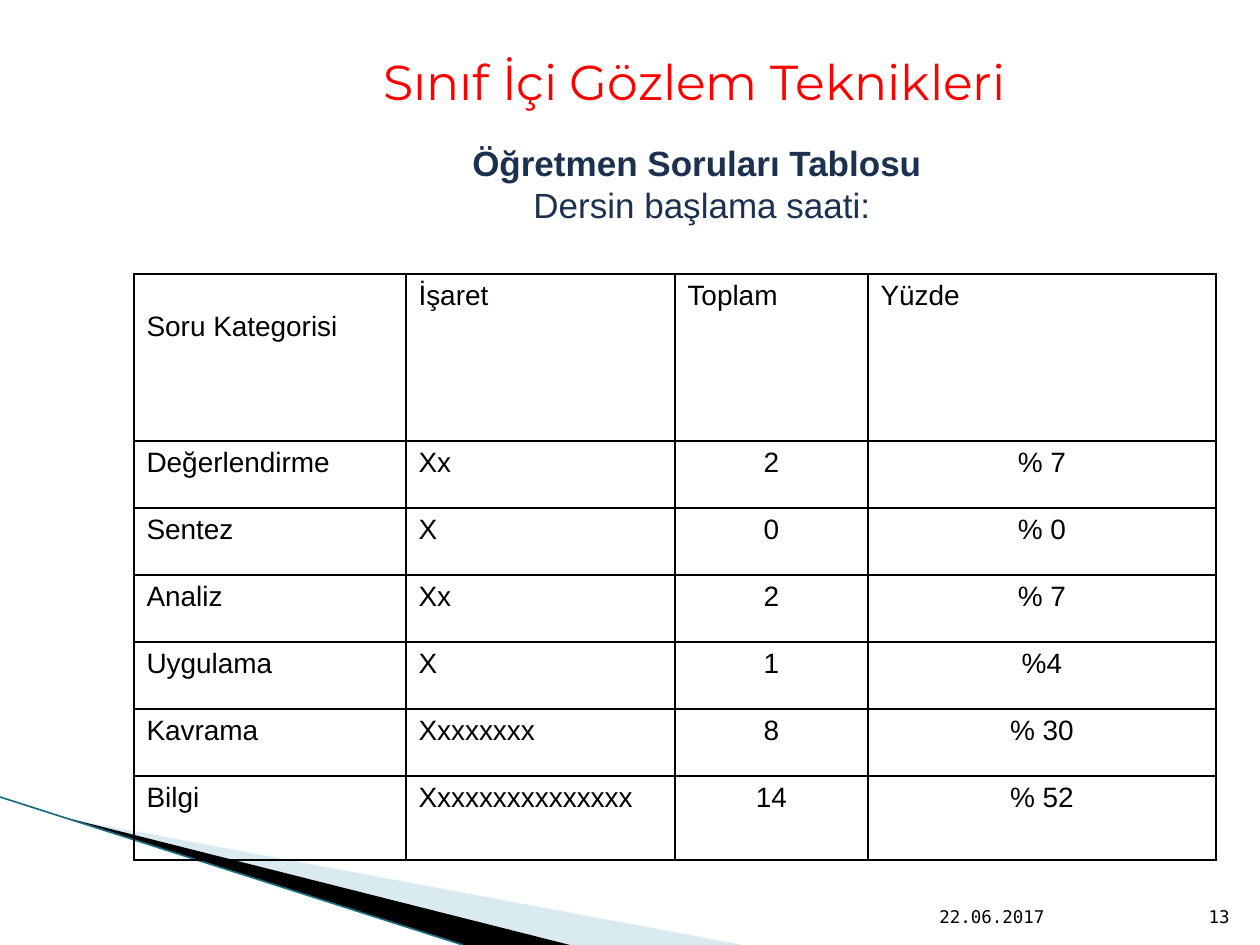
from lxml.etree import SubElement
from pptx import Presentation
from pptx.dml.color import RGBColor
from pptx.enum.shapes import MSO_CONNECTOR
from pptx.enum.text import MSO_ANCHOR, PP_ALIGN
from pptx.oxml.ns import qn
from pptx.util import Pt

PX = 914400 / 126
COLORS = {
    "black": "000000",
    "title": "FF0000",
    "subtitle": "1C314E",
    "pale": "A0CBDC",
    "teal": "1B6F82",
}


def px(length):
    return round(length * PX)


def add_text(page, area, lines, font, size, color, align, anchor=MSO_ANCHOR.TOP):
    box = page.shapes.add_textbox(*map(px, area))
    frame = box.text_frame
    frame.word_wrap = True
    frame.vertical_anchor = anchor
    frame.text = "\n".join(lines)
    for paragraph in frame.paragraphs:
        paragraph.alignment = align
        for span in paragraph.runs:
            span.font.name = font
            span.font.size = Pt(size)
            span.font.color.rgb = RGBColor.from_string(COLORS[color])
    return frame


deck = Presentation()
deck.slide_width, deck.slide_height = px(1260), px(945)
page = deck.slides.add_slide(deck.slide_layouts[6])

# Corner wedges
wedges = [
    ("pale", [(69, 819), (743, 945), (570, 945)]),
    ("black", [(67, 818), (570, 945), (463, 945)]),
]
for color, points in wedges:
    builder = page.shapes.build_freeform(*points[0], scale=PX)
    builder.add_line_segments(points[1:], close=True)
    wedge = builder.convert_to_shape()
    wedge.shadow.inherit = False
    wedge.fill.solid()
    wedge.fill.fore_color.rgb = RGBColor.from_string(COLORS[color])
    wedge.line.fill.background()
    if color == "pale":
        tint = wedge.fill._xPr.find(".//" + qn("a:srgbClr"))
        SubElement(tint, qn("a:alpha")).set("val", "40000")

# Edge line under the wedges
edge = page.shapes.add_connector(
    MSO_CONNECTOR.STRAIGHT, px(0), px(797), px(463), px(945))
edge.line.color.rgb = RGBColor.from_string(COLORS["teal"])
edge.line.width = Pt(0.95)
SubElement(edge._element.spPr, qn("a:effectLst"))

# Title
title = add_text(page, (253, 45, 853, 72), ["Sınıf İçi Gözlem Teknikleri"],
                 "Montserrat", 28, "title", PP_ALIGN.CENTER)
title.margin_left = px(42)

# Question table
rows = [
    ("Soru Kategorisi", "İşaret", "Toplam", "Yüzde"),
    ("Değerlendirme", "Xx", "2", "% 7"),
    ("Sentez", "X", "0", "% 0"),
    ("Analiz", "Xx", "2", "% 7"),
    ("Uygulama", "X", "1", "%4"),
    ("Kavrama", "Xxxxxxxx", "8", "% 30"),
    ("Bilgi", "Xxxxxxxxxxxxxxx", "14", "% 52"),
]
widths = [272, 269, 193, 348]
heights = [167] + [67] * 5 + [84]
aligns = [PP_ALIGN.JUSTIFY, PP_ALIGN.LEFT, PP_ALIGN.CENTER, PP_ALIGN.CENTER]
table = page.shapes.add_table(len(rows), len(widths), px(134), px(274),
                              px(sum(widths)), px(sum(heights))).table
table.first_row = table.horz_banding = False
for column, width in zip(table.columns, widths):
    column.width = px(width)
for row, height in zip(table.rows, heights):
    row.height = px(height)

for row_index, values in enumerate(rows):
    for column_index, value in enumerate(values):
        cell = table.cell(row_index, column_index)
        cell.text_frame.text = value
        paragraph = cell.text_frame.paragraphs[0]
        paragraph.alignment = aligns[column_index] if row_index else PP_ALIGN.JUSTIFY
        font = paragraph.runs[0].font
        font.name, font.size = "Arial", Pt(16)
        font.color.rgb = RGBColor.from_string(COLORS["black"])
        properties = cell._tc.get_or_add_tcPr()
        for side in ("lnL", "lnR", "lnT", "lnB"):
            border = SubElement(properties, qn("a:" + side), w=str(Pt(1)))
            fill = SubElement(border, qn("a:solidFill"))
            SubElement(fill, qn("a:srgbClr"), val=COLORS["black"])
        cell.fill.background()
table.cell(0, 0).margin_top = px(37)

# Subtitle
subtitle = add_text(page, (382, 135, 630, 97),
                    ["Öğretmen Soruları Tablosu", "Dersin başlama saati:"],
                    "Arial", 20, "subtitle", PP_ALIGN.CENTER)
heading, start_time = subtitle.paragraphs
heading.runs[0].font.bold = True
start_time._p.get_or_add_pPr().set("marL", str(px(10)))

# Date and slide number
footers = [
    ((927, 883, 265, 50), "22.06.2017", PP_ALIGN.LEFT),
    ((1192, 883, 50, 50), "13", PP_ALIGN.RIGHT),
]
for area, text, align in footers:
    add_text(page, area, [text], "DejaVu Sans Mono", 10, "black", align,
             MSO_ANCHOR.BOTTOM)

deck.save("out.pptx")
